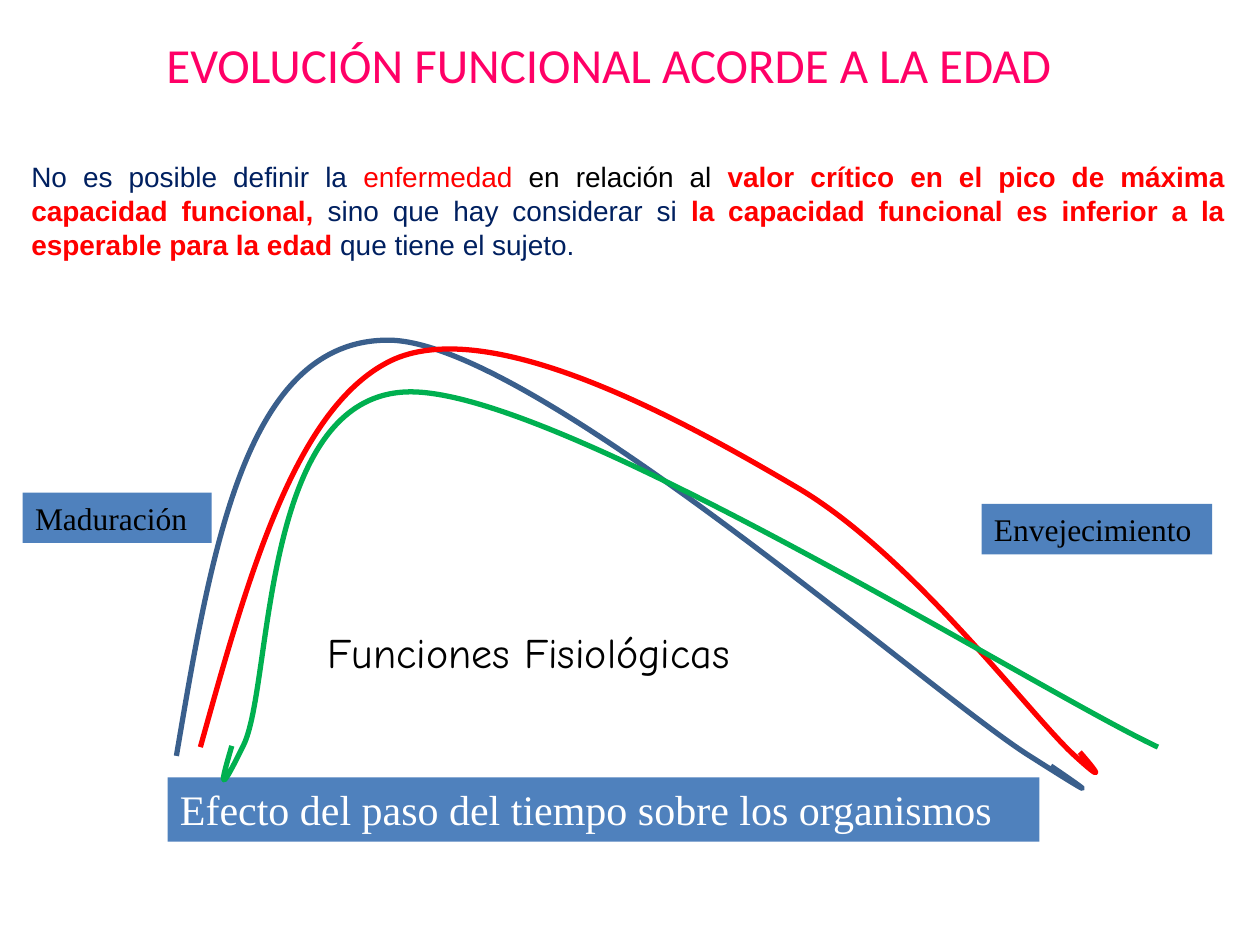
from lxml import etree
from pptx import Presentation
from pptx.dml.color import RGBColor
from pptx.enum.shapes import MSO_SHAPE
from pptx.enum.text import MSO_ANCHOR, MSO_AUTO_SIZE, PP_ALIGN
from pptx.oxml.ns import qn
from pptx.util import Inches, Pt

RECT = MSO_SHAPE.RECTANGLE
TOP, GROW = MSO_ANCHOR.TOP, MSO_AUTO_SIZE.SHAPE_TO_FIT_TEXT
LEFT, CENTER, JUSTIFY = PP_ALIGN.LEFT, PP_ALIGN.CENTER, PP_ALIGN.JUSTIFY

PINK = RGBColor(0xFF, 0x00, 0x66)
NAVY = RGBColor(0x00, 0x20, 0x60)
RED = RGBColor(0xFF, 0x00, 0x00)
GREEN = RGBColor(0x00, 0xB0, 0x50)
STEEL = RGBColor(0x3A, 0x5F, 0x8C)
BLUE = RGBColor(0x4F, 0x81, 0xBD)
BLACK = RGBColor(0x00, 0x00, 0x00)
WHITE = RGBColor(0xFF, 0xFF, 0xFF)
SERIF = "Times New Roman"

# Title: runs are (text, colour, bold)
TITLE = [("EVOLUCIÓN FUNCIONAL ACORDE A LA EDAD", PINK, False)]
INTRO = [
    ("No es posible definir la ", NAVY, False),
    ("enfermedad ", RED, False),
    ("en relación al ", BLACK, False),
    ("valor crítico en el pico de máxima capacidad funcional, ", RED, True),
    ("sino que hay considerar si ", NAVY, False),
    ("la capacidad funcional es inferior a la esperable para la edad ", RED, True),
    ("que tiene el sujeto.", NAVY, False),
]

# Texts: box, fill, runs, font, size, alignment
TEXTS = [
    ((0.18, 3.91, 1.5, 0.4), BLUE, [("Maduración", BLACK, False)], SERIF, 18, LEFT),
    ((1.33, 6.17, 6.92, 0.51), BLUE,
     [("Efecto del paso del tiempo sobre los organismos", WHITE, False)],
     SERIF, 24, LEFT),
    ((2.5, 4.92, 3.58, 0.5), None, [("Funciones Fisiológicas", BLACK, False)],
     "Comic Neue", 24, LEFT),
    ((0.15, 1.22, 9.67, 0.91), None, INTRO, "Arial", 16, JUSTIFY),
    ((7.79, 4, 1.83, 0.4), BLUE, [("Envejecimiento", BLACK, False)], SERIF, 18, LEFT),
]

# Curves: colour, box, start, then Bezier pieces (two controls and an end)
CURVES = [
    (STEEL, (1.4, 2.7, 7.19, 3.56), (1.4, 6), [
        ((1.68, 4.35), (1.95, 2.7), (3.08, 2.7)),
        ((4.2, 2.7), (7.27, 5.41), (8.14, 5.98)),
        ((9.02, 6.54), (8.34, 6.08), (8.34, 6.08))]),
    (RED, (1.59, 2.77, 7.11, 3.36), (1.59, 5.93), [
        ((1.97, 4.57), (2.35, 3.2), (3.13, 2.85)),
        ((3.92, 2.51), (5.41, 3.33), (6.31, 3.86)),
        ((7.21, 4.38), (8.14, 5.63), (8.51, 5.98)),
        ((8.89, 6.33), (8.57, 5.97), (8.57, 5.97))]),
    (GREEN, (1.77, 3.11, 7.42, 3.08), (1.84, 5.92), [
        ((1.77, 6.16), (1.7, 6.39), (1.93, 5.92)),
        ((2.17, 5.45), (2.05, 3.11), (3.26, 3.11)),
        ((4.46, 3.11), (8.21, 5.47), (9.19, 5.93))]),
]


def place(box):
    return [Inches(n) for n in box]


def write(shape, runs, font, size, align):
    frame = shape.text_frame
    frame.word_wrap = True
    frame.auto_size = GROW
    frame.vertical_anchor = TOP
    para = frame.paragraphs[0]
    para.alignment = align
    for text, color, bold in runs:
        run = para.add_run()
        run.text = text
        run.font.name = font
        run.font.size = Pt(size)
        run.font.bold = bold
        run.font.color.rgb = color


def add_curve(shapes, box, start, pieces):
    """A freeform that fills the box, its outline bent into Bezier pieces."""
    left, top, width, height = place(box)
    pen = shapes.build_freeform(left, top)
    pen.add_line_segments([(left + width, top + height)], close=False)
    curve = pen.convert_to_shape()
    route = curve._element.find(".//" + qn("a:path"))
    for part in list(route):
        route.remove(part)
    for tag, points in [("a:moveTo", [start])] + [("a:cubicBezTo", p) for p in pieces]:
        part = etree.SubElement(route, qn(tag))
        for x, y in points:
            etree.SubElement(part, qn("a:pt"),
                             x=str(Inches(x) - left), y=str(Inches(y) - top))
    return curve


deck = Presentation()
deck.slide_width, deck.slide_height = Inches(10), Inches(7.5)
slide = deck.slides.add_slide(deck.slide_layouts[5])
slide.background.fill.solid()
slide.background.fill.fore_color.rgb = WHITE
shapes = slide.shapes

# Title
title = shapes.title
title.left, title.top, title.width, title.height = place((0.17, 0.22, 9.32, 0.57))
write(title, TITLE, "Calibri", 28, CENTER)

# Labels and plain text
for box, fill, runs, font, size, align in TEXTS:
    if fill:
        item = shapes.add_shape(RECT, *place(box))
        item.shadow.inherit = False
        item.fill.solid()
        item.fill.fore_color.rgb = fill
        item.line.fill.background()
    else:
        item = shapes.add_textbox(*place(box))
    write(item, runs, font, size, align)

# Curves
for color, box, start, pieces in CURVES:
    curve = add_curve(shapes, box, start, pieces)
    curve.shadow.inherit = False
    curve.fill.background()
    curve.line.color.rgb = color
    curve.line.width = Pt(3)

deck.save("out.pptx")
